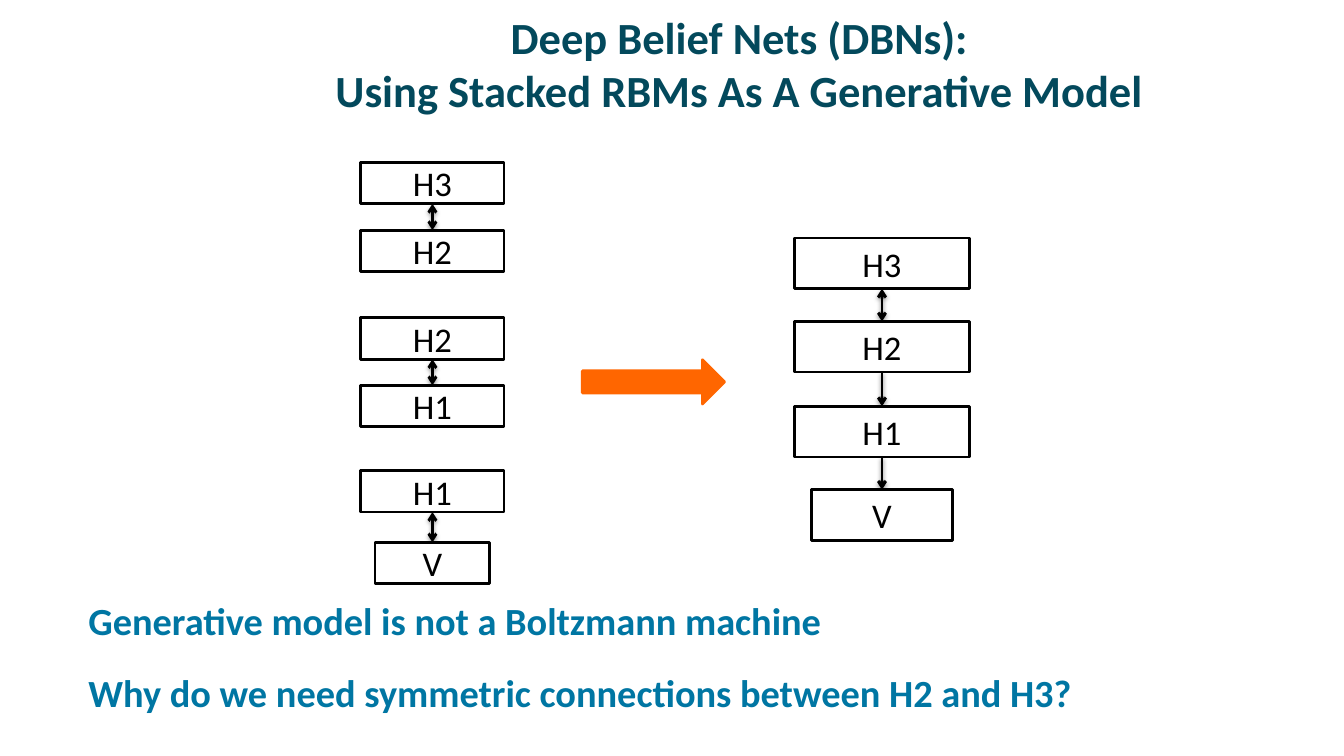
from dataclasses import dataclass

from lxml.etree import SubElement
from pptx import Presentation
from pptx.dml.color import RGBColor as RGB
from pptx.enum.shapes import MSO_CONNECTOR as LINK, MSO_SHAPE as SHAPE
from pptx.enum.text import MSO_ANCHOR as ANCHOR, MSO_AUTO_SIZE as FIT, PP_ALIGN as ALIGN
from pptx.oxml.ns import qn
from pptx.util import Pt


@dataclass(frozen=True)
class Theme:
    font: str = "Calibri"
    title: RGB = RGB.from_string("03495C")
    body: RGB = RGB.from_string("0076A3")
    ink: RGB = RGB.from_string("000000")
    paper: RGB = RGB.from_string("FFFFFF")
    accent: RGB = RGB.from_string("FF6600")
    title_size: float = 31.8
    body_size: float = 27.4
    node_size: float = 24.7
    stroke: float = 2


THEME = Theme()


def add_run(para, text, size, color, bold=False):
    run = para.add_run()
    run.text = text
    font = run.font
    font.name, font.size, font.bold = THEME.font, Pt(size), bold
    font.color.rgb = color


def place(holder, left, top, width, height, anchor):
    """Move a placeholder and fix its text frame, which is returned."""
    holder.left, holder.top = Pt(left), Pt(top)
    holder.width, holder.height = Pt(width), Pt(height)
    frame = holder.text_frame
    frame.word_wrap, frame.auto_size = True, FIT.NONE
    frame.vertical_anchor = anchor
    frame.margin_left = frame.margin_right = Pt(8)
    frame.margin_top = frame.margin_bottom = Pt(4)
    return frame


def set_title(slide, lines):
    frame = place(slide.shapes.title, 48, 12, 960, 66, ANCHOR.MIDDLE)
    para = frame.paragraphs[0]
    para.alignment = ALIGN.CENTER
    for i, line in enumerate(lines):
        if i:
            para.add_line_break()
        add_run(para, line, THEME.title_size, THEME.title, True)


def set_body(slide, lines):
    frame = place(slide.placeholders[1], 48, 422.6, 960, 110, ANCHOR.TOP)
    for i, line in enumerate(lines):
        para = frame.add_paragraph() if i else frame.paragraphs[0]
        props = para._p.get_or_add_pPr()
        props.set("marL", str(Pt(7.2)))
        props.set("indent", "0")
        SubElement(props, qn("a:buNone"))
        para.space_before = Pt(18.5 if i else 0)
        add_run(para, line, THEME.body_size, THEME.body, True)


def add_block(slide, kind, left, top, width, height, fill, edge):
    block = slide.shapes.add_shape(kind, Pt(left), Pt(top), Pt(width), Pt(height))
    block.shadow.inherit = False
    block.fill.solid()
    block.fill.fore_color.rgb = fill
    block.line.color.rgb = edge
    block.line.width = Pt(THEME.stroke)
    return block


def add_node(slide, name, mid, top, width, height):
    node = add_block(slide, SHAPE.RECTANGLE, mid - width / 2, top, width, height,
                     THEME.paper, THEME.ink)
    frame = node.text_frame
    frame.vertical_anchor = ANCHOR.MIDDLE
    para = frame.paragraphs[0]
    para.alignment = ALIGN.CENTER
    add_run(para, name, THEME.node_size, THEME.ink)


def add_arrow(slide, mid, low, high, both):
    """Link two layers, with a head at the lower end and maybe at the upper."""
    link = slide.shapes.add_connector(LINK.STRAIGHT, Pt(mid), Pt(low), Pt(mid), Pt(high))
    link.line.color.rgb = THEME.ink
    link.line.width = Pt(THEME.stroke)
    edge = link.line._ln
    for end in ["headEnd", "tailEnd"] if both else ["headEnd"]:
        SubElement(edge, qn("a:" + end), type="arrow")
    effects = SubElement(link._element.spPr, qn("a:effectLst"))
    shade = SubElement(effects, qn("a:outerShdw"), blurRad=str(Pt(3.1)),
                       dist=str(Pt(1.6)), dir="5400000", rotWithShape="0")
    color = SubElement(shade, qn("a:srgbClr"), val=str(THEME.ink))
    SubElement(color, qn("a:alpha"), val="38000")


def add_stack(slide, mid, width, height, layers, two_way):
    """Draw layers (name, top) downwards; the first two_way links have two heads."""
    for i, (name, top) in enumerate(layers):
        if i:
            add_arrow(slide, mid, top, layers[i - 1][1] + height, i <= two_way)
        span = width * 0.8 if name == "V" else width
        add_node(slide, name, mid, top, span, height)


def main():
    deck = Presentation()
    deck.slide_width, deck.slide_height = Pt(960), Pt(540)
    slide = deck.slides.add_slide(deck.slide_layouts[1])

    set_title(slide, ["Deep Belief Nets (DBNs):",
                      "Using Stacked RBMs As A Generative Model"])
    set_body(slide, ["Generative model is not a Boltzmann machine",
                     "Why do we need symmetric connections between H2 and H3?"])

    pairs = [
        [("H3", 116), ("H2", 164.4)],
        [("H2", 227), ("H1", 275.2)],
        [("H1", 336.2), ("V", 387.4)],
    ]
    for pair in pairs:
        add_stack(slide, 308.9, 102.4, 29.6, pair, 1)

    net = [("H3", 170), ("H2", 229.6), ("H1", 290.2), ("V", 349.8)]
    add_stack(slide, 630, 125.4, 36.2, net, 1)

    add_block(slide, SHAPE.RIGHT_ARROW, 416, 257, 101.6, 31.6,
              THEME.accent, THEME.accent)
    deck.save("out.pptx")


if __name__ == "__main__":
    main()
